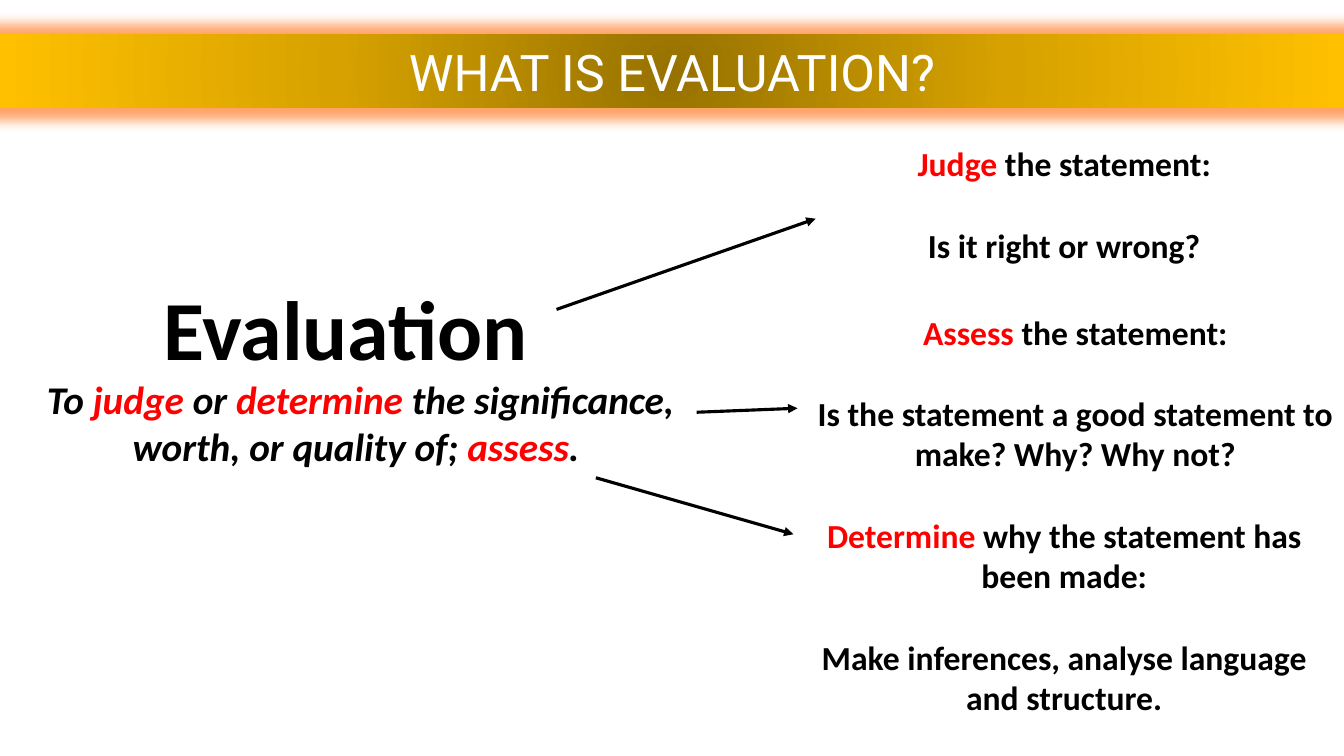
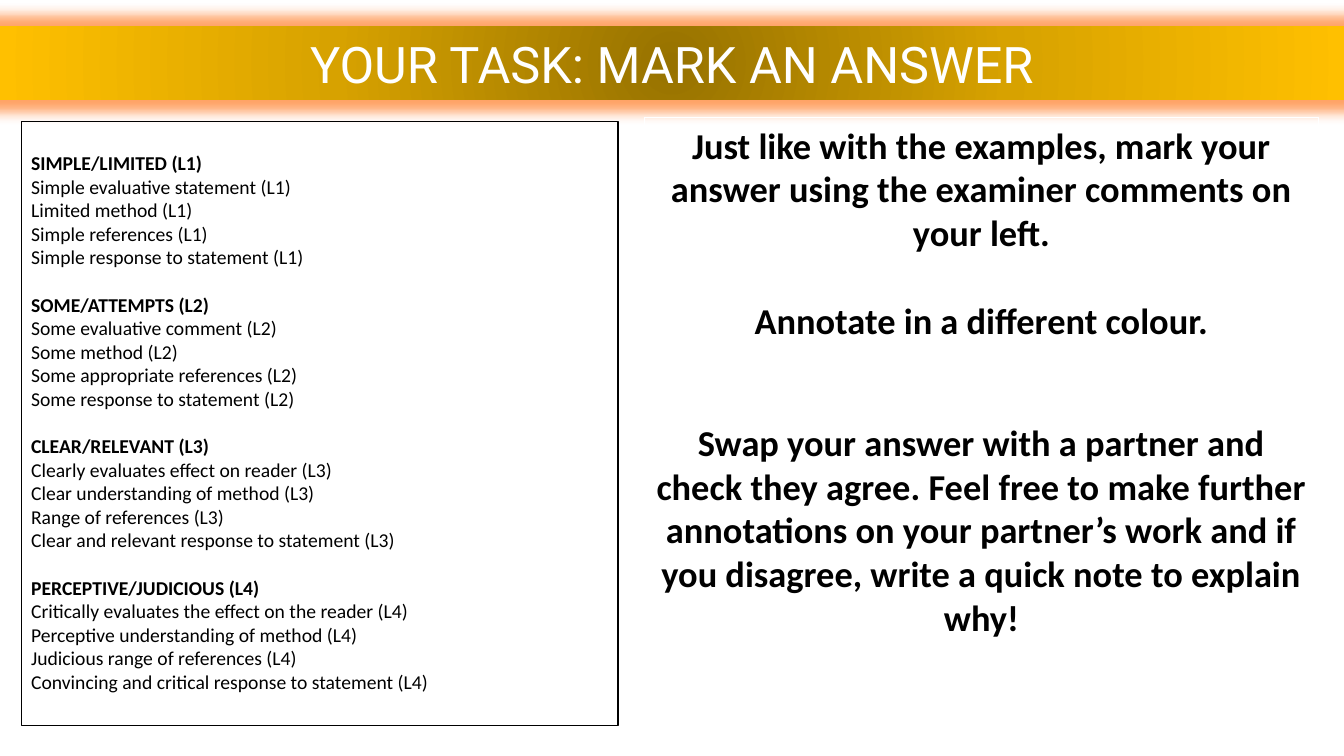
from dataclasses import dataclass

from lxml import etree
from pptx import Presentation
from pptx.dml.color import RGBColor
from pptx.enum.shapes import MSO_CONNECTOR, MSO_SHAPE
from pptx.enum.text import MSO_ANCHOR, MSO_AUTO_SIZE, PP_ALIGN
from pptx.oxml import parse_xml
from pptx.oxml.ns import nsdecls, qn
from pptx.util import Inches, Pt


@dataclass(frozen=True)
class Theme:
    ink: str = "000000"
    paper: str = "FFFFFF"
    accent: str = "FF0000"
    glow: str = "FF6600"
    gold: tuple = ((0, "977200"), (50, "D7A200"), (100, "FFC000"))
    body_font: str = "Calibri"
    title_font: str = "Roboto"
    title_size: int = 36
    term_size: int = 60
    meaning_size: int = 28
    task_size: int = 26
    point_size: int = 24
    list_size: int = 14
    line_height: float = 1.22


T = Theme()
WIDTH, HEIGHT = 13.33, 7.5
BAND_HEIGHT = 0.73

TERM = "Evaluation"
MEANING = ("To *judge* or *determine* the significance, "
           "worth, or quality of; *assess*. ")
POINTS = [
    ((7.87, 1.37, 5.37, 1.62),
     ["*Judge* the statement:", "Is it right or wrong?"]),
    ((7.98, 3.04, 5.37, 2.02),
     ["*Assess* the statement:",
      "Is the statement a good statement to make? Why? Why not?"]),
    ((7.87, 5.06, 5.37, 2.42),
     ["*Determine* why the statement has been made:",
      "Make inferences, analyse language and structure."]),
]
ARROWS = [
    ((5.52, 3.07), (8.09, 2.17)),
    ((6.91, 4.09), (7.91, 4.05)),
    ((5.91, 4.74), (7.87, 5.3)),
]

LEVELS = [
    ("SIMPLE/LIMITED", ["Simple evaluative statement", "Limited method",
                        "Simple references", "Simple response to statement"]),
    ("SOME/ATTEMPTS", ["Some evaluative comment", "Some method",
                       "Some appropriate references",
                       "Some response to statement"]),
    ("CLEAR/RELEVANT", ["Clearly evaluates effect on reader",
                        "Clear understanding of method",
                        "Range of references",
                        "Clear and relevant response to statement"]),
    ("PERCEPTIVE/JUDICIOUS", ["Critically evaluates the effect on the reader",
                              "Perceptive understanding of method",
                              "Judicious range of references",
                              "Convincing and critical response to statement"]),
]
TASKS = [
    (1.17, ["Just like with the examples, mark your answer using the "
            "examiner comments on your left.",
            "Annotate in a different colour."]),
    (4.12, ["Swap your answer with a partner and check they agree. Feel free "
            "to make further annotations on your partner’s work and if you "
            "disagree, write a quick note to explain why!"]),
]


def rgb(color):
    return RGBColor.from_string(color)


def style(r, font, size, color, bold=False, italic=False):
    f = r.font
    f.name, f.size, f.bold, f.italic = font, Pt(size), bold, italic
    f.color.rgb = rgb(color)


def blank_line(size):
    return Pt(round(size * T.line_height, 1))


def add_paragraph(tf, index, text, size, align, bold=True, italic=False):
    p = tf.paragraphs[0] if index == 0 else tf.add_paragraph()
    p.alignment = align
    for i, part in enumerate(text.split("*")):
        if part:
            r = p.add_run()
            r.text = part
            style(r, T.body_font, size, T.accent if i % 2 else T.ink,
                  bold, italic)
    return p


def fill_text(sp, texts, size, align=PP_ALIGN.CENTER, italic=False):
    tf = sp.text_frame
    tf.word_wrap = True
    for i, text in enumerate(texts):
        p = add_paragraph(tf, i, text, size, align, italic=italic)
        if i:
            p.space_before = blank_line(size)


def add_text(s, box, *args, **options):
    fill_text(s.shapes.add_textbox(*map(Inches, box)), *args, **options)


def add_panel(s, box, line):
    sp = s.shapes.add_shape(MSO_SHAPE.RECTANGLE, *map(Inches, box))
    sp.shadow.inherit = False
    sp.fill.background()
    sp.line.color.rgb = rgb(line)
    sp.line.width = Pt(0.75)
    sp.text_frame.word_wrap = True
    sp.text_frame.vertical_anchor = MSO_ANCHOR.TOP
    return sp


def add_titled_slide(prs, title, top):
    s = prs.slides.add_slide(prs.slide_layouts[5])
    sp = s.shapes.title
    sp.left, sp.top = 0, Inches(top)
    sp.width, sp.height = prs.slide_width, Inches(BAND_HEIGHT)
    stops = "".join(
        f'<a:gs pos="{pos * 1000}"><a:srgbClr val="{color}"/></a:gs>'
        for pos, color in T.gold)
    props = sp.element.spPr
    for xml in (
        f'<a:prstGeom {nsdecls("a")} prst="rect"><a:avLst/></a:prstGeom>',
        f'<a:gradFill {nsdecls("a")}><a:gsLst>{stops}</a:gsLst>'
        '<a:path path="circle"><a:fillToRect l="50000" t="50000" '
        'r="50000" b="50000"/></a:path></a:gradFill>',
        f'<a:effectLst {nsdecls("a")}><a:glow rad="228600">'
        f'<a:srgbClr val="{T.glow}"><a:alpha val="60000"/></a:srgbClr>'
        '</a:glow></a:effectLst>',
    ):
        props.append(parse_xml(xml))
    tf = sp.text_frame
    tf.text = title
    tf.auto_size = MSO_AUTO_SIZE.NONE
    tf.vertical_anchor = MSO_ANCHOR.MIDDLE
    p = tf.paragraphs[0]
    p.alignment = PP_ALIGN.CENTER
    style(p.runs[0], T.title_font, T.title_size, T.paper)
    return s


def add_arrow(s, start, end):
    cn = s.shapes.add_connector(MSO_CONNECTOR.STRAIGHT,
                                *map(Inches, start + end))
    cn.line.color.rgb = rgb(T.ink)
    cn.line.width = Pt(2.25)
    etree.SubElement(cn.get_or_add_ln(), qn("a:tailEnd"), type="triangle")
    etree.SubElement(cn.element.spPr, qn("a:effectLst"))


def add_mark_scheme(s, box):
    tf = add_panel(s, box, T.ink).text_frame
    tf.margin_top += blank_line(T.list_size)
    index = 0
    for level, (heading, criteria) in enumerate(LEVELS, 1):
        for row, text in enumerate([heading] + criteria):
            p = add_paragraph(tf, index, f"{text} (L{level})", T.list_size,
                              PP_ALIGN.LEFT, bold=row == 0)
            if row == 0 and index:
                p.space_before = blank_line(T.list_size)
            index += 1


def build_definition(prs):
    s = add_titled_slide(prs, "WHAT IS EVALUATION?", 0.34)
    add_text(s, (1.52, 2.69, 4.39, 1.11), [TERM], T.term_size, PP_ALIGN.LEFT)
    add_text(s, (0.24, 3.67, 6.67, 1.04), [MEANING], T.meaning_size,
             italic=True)
    for box, texts in POINTS:
        add_text(s, box, texts, T.point_size)
    for start, end in ARROWS:
        add_arrow(s, start, end)


def build_task(prs):
    s = add_titled_slide(prs, "YOUR TASK: MARK AN ANSWER", 0.26)
    for top, texts in TASKS:
        sp = add_panel(s, (6.39, top, 6.69, 2.56), T.paper)
        fill_text(sp, texts, T.task_size)
    add_mark_scheme(s, (0.21, 1.21, 5.92, 5.99))


def main():
    prs = Presentation()
    prs.slide_width, prs.slide_height = Inches(WIDTH), Inches(HEIGHT)
    build_definition(prs)
    build_task(prs)
    prs.save("out.pptx")


if __name__ == "__main__":
    main()
